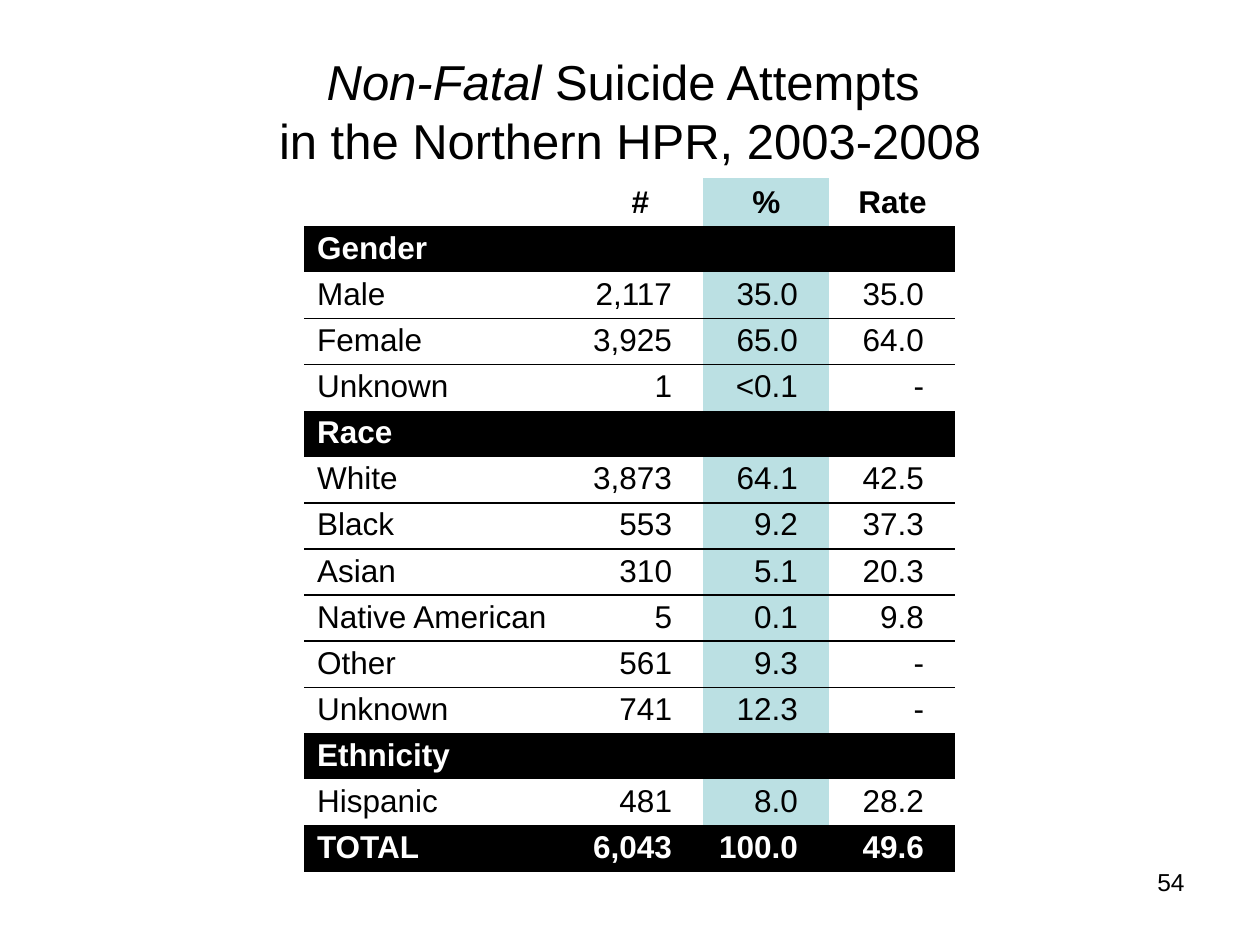
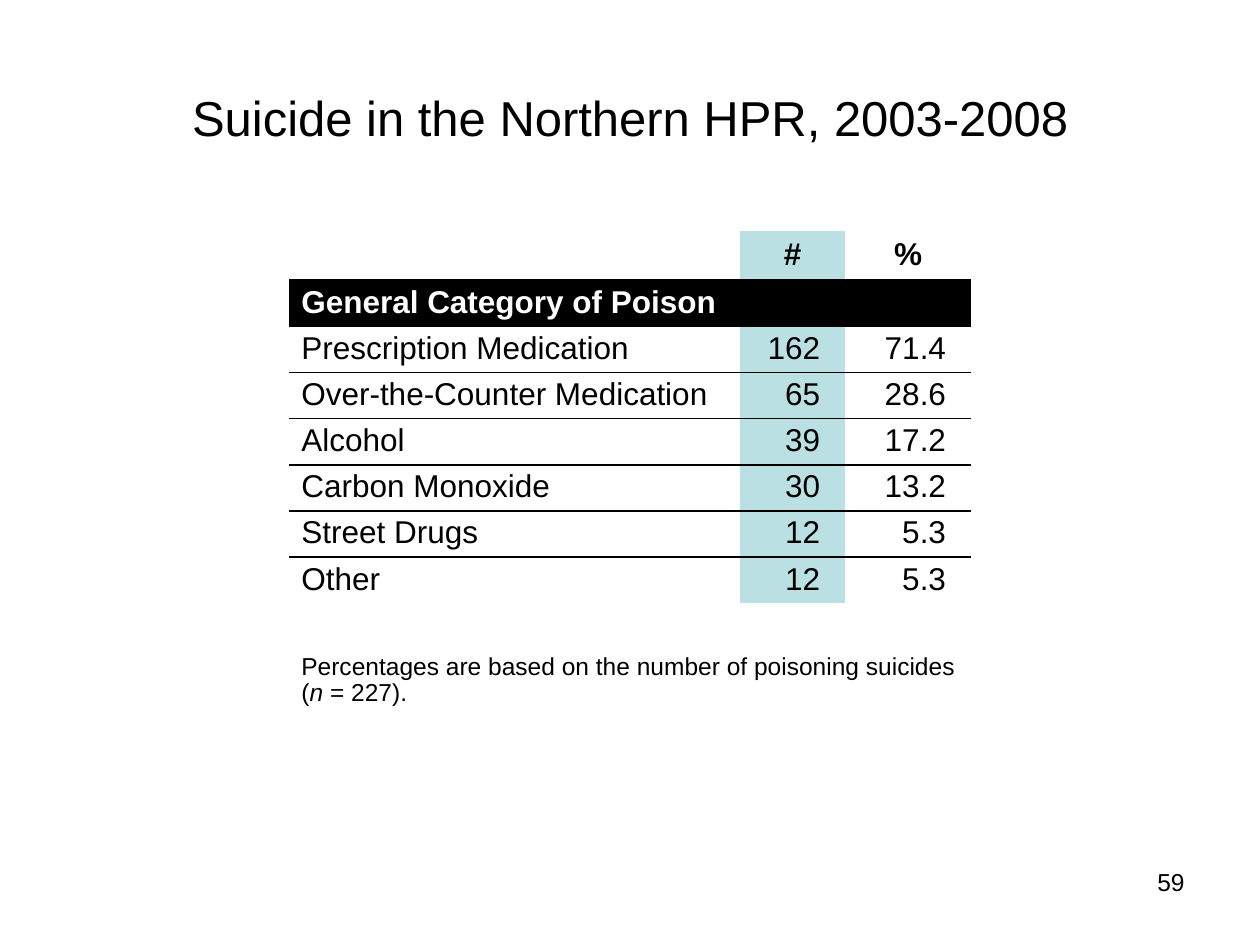
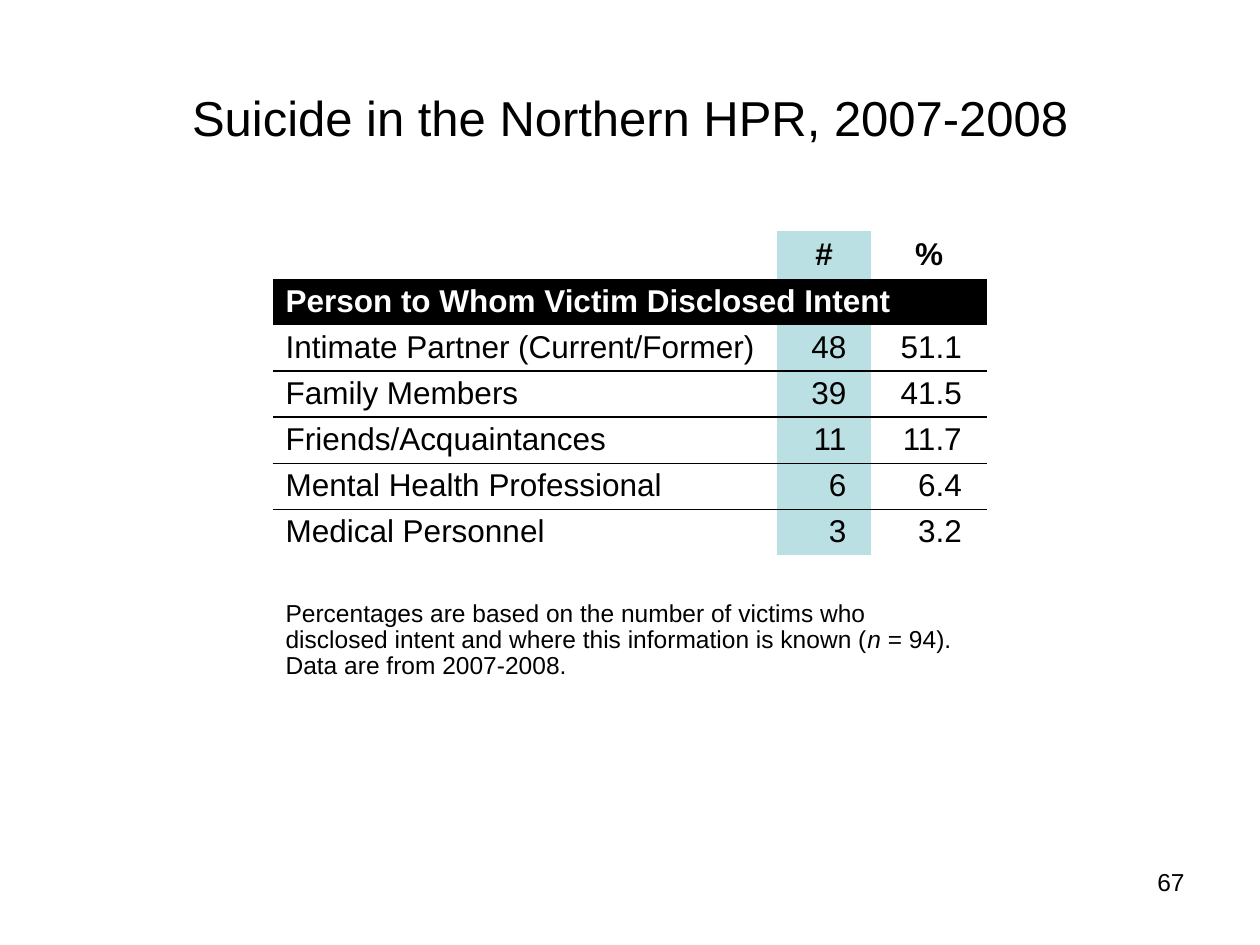
from pptx import Presentation
from pptx.dml.color import RGBColor as RGB
from pptx.enum.text import MSO_ANCHOR as ANCHOR, PP_ALIGN as ALIGN
from pptx.oxml import parse_xml
from pptx.oxml.ns import nsdecls, qn
from pptx.util import Pt

BLACK = RGB(0x00, 0x00, 0x00)
WHITE = RGB(0xFF, 0xFF, 0xFF)
TEAL = RGB(0xBB, 0xE0, 0xE3)
FONT = "Arial"
PLAIN_TABLE = "{2D5ABB26-0587-4C30-8999-92F81FD0307C}"
SLIDE_W, SLIDE_H = 720, 540
HEAD_H, ROW_H, NOTE_LINE_H = 27.4, 26.35, 15
CELL_TOP, CELL_BOTTOM = 1.5, 3.6

SLIDES = [
    dict(
        number="54", title=[("Non-Fatal ", True), ("Suicide Attempts \nin the Northern HPR, 2003-2008", False)],
        title_top=18, table_top=102, widths=[156, 72, 72, 72], highlight=2, inset=18, band=ROW_H,
        rows=[
            ("head", ["", "#", "%", "Rate"]),
            ("section", ["Gender"]),
            ("data", ["Male", "2,117", "35.0", "35.0"]),
            ("data", ["Female", "3,925", "65.0", "64.0"]),
            ("data", ["Unknown", "1", "<0.1", "-"]),
            ("section", ["Race"]),
            ("data", ["White", "3,873", "64.1", "42.5"]),
            ("data", ["Black", "553", "9.2", "37.3"]),
            ("data", ["Asian", "310", "5.1", "20.3"]),
            ("data", ["Native American", "5", "0.1", "9.8"]),
            ("data", ["Other", "561", "9.3", "-"]),
            ("data", ["Unknown", "741", "12.3", "-"]),
            ("section", ["Ethnicity"]),
            ("data", ["Hispanic", "481", "8.0", "28.2"]),
            ("total", ["TOTAL", "6,043", "100.0", "49.6"]),
        ],
    ),
    dict(
        number="59", title=[("Suicide in the Northern HPR, 2003-2008", False)],
        title_top=21.6, table_top=132, widths=[258, 60, 72], highlight=1, inset=14.4, band=27.2,
        rows=[
            ("head", ["", "#", "%"]),
            ("section", ["General Category of Poison"]),
            ("data", ["Prescription Medication", "162", "71.4"]),
            ("data", ["Over-the-Counter Medication", "65", "28.6"]),
            ("data", ["Alcohol", "39", "17.2"]),
            ("data", ["Carbon Monoxide", "30", "13.2"]),
            ("data", ["Street Drugs", "12", "5.3"]),
            ("data", ["Other", "12", "5.3"]),
        ],
        note=[("Percentages are based on the number of poisoning suicides (", False),
              ("n ", True), ("= 227).", False)],
        note_lines=2, gap=26,
    ),
    dict(
        number="67", title=[("Suicide in the Northern HPR, 2007-2008", False)],
        title_top=21.6, table_top=132, widths=[288, 54, 66], highlight=1, inset=14.4, band=ROW_H,
        rows=[
            ("head", ["", "#", "%"]),
            ("section", ["Person to Whom Victim Disclosed Intent"]),
            ("data", ["Intimate Partner (Current/Former)", "48", "51.1"]),
            ("data", ["Family Members", "39", "41.5"]),
            ("data", ["Friends/Acquaintances", "11", "11.7"]),
            ("data", ["Mental Health Professional", "6", "6.4"]),
            ("data", ["Medical Personnel", "3", "3.2"]),
        ],
        note=[("Percentages are based on the number of victims who disclosed intent "
               "and where this information is known (", False),
              ("n ", True), ("= 94). Data are from 2007-2008.", False)],
        note_lines=3, gap=20.7,
    ),
]


def write(tf, text, size=18, color=BLACK, bold=False, align=ALIGN.LEFT, spacing=None):
    runs = [(text, False)] if isinstance(text, str) else text
    p = tf.paragraphs[0]
    p.alignment = align
    if spacing:
        p.line_spacing = spacing
    for content, italic in runs:
        for i, line in enumerate(content.split("\n")):
            if i:
                p.add_line_break()
            r = p.add_run()
            r.text = line
            f = r.font
            f.name, f.size, f.bold, f.italic = FONT, Pt(size), bold, italic
            f.color.rgb = color


def add_text(s, box, text, anchor=ANCHOR.TOP, **style):
    tf = s.shapes.add_textbox(*map(Pt, box)).text_frame
    tf.word_wrap = True
    tf.vertical_anchor = anchor
    write(tf, text, **style)


def underline(cell):
    line = parse_xml(
        f'<a:lnB {nsdecls("a")} w="12700"><a:solidFill><a:srgbClr val="{BLACK}"/>'
        '</a:solidFill></a:lnB>')
    cell._tc.get_or_add_tcPr().insert(0, line)


def fill_cell(cell, text, fill=None, inset=7.2, **style):
    cell.vertical_anchor = ANCHOR.BOTTOM
    cell.margin_right = Pt(inset)
    if fill is None:
        cell.fill.background()
    else:
        cell.fill.solid()
        cell.fill.fore_color.rgb = fill
    cell.margin_top = Pt(CELL_TOP if text else 0)
    cell.margin_bottom = Pt(CELL_BOTTOM if text else 0)
    if text:
        write(cell.text_frame, text, spacing=0.95, **style)


def add_data_table(s, content):
    widths, inset = content["widths"], content["inset"]
    rows = list(content["rows"])
    if "note" in content:
        rows += [("gap", []), ("note", [content["note"]])]
    row_heights = {
        "head": HEAD_H, "section": content["band"], "gap": content.get("gap"),
        "note": CELL_TOP + CELL_BOTTOM + NOTE_LINE_H * content.get("note_lines", 0)}
    heights = [row_heights.get(kind, ROW_H) for kind, _ in rows]
    width = sum(widths)
    box = ((SLIDE_W - width) / 2, content["table_top"], width, sum(heights))
    frame = s.shapes.add_table(len(rows), len(widths), *map(Pt, box))
    table = frame.table
    table.first_row = table.horz_banding = False
    next(frame.element.iter(qn("a:tableStyleId"))).text = PLAIN_TABLE
    for column, w in zip(table.columns, widths):
        column.width = Pt(w)
    kinds = [kind for kind, _ in rows] + [None]
    for i, (kind, values) in enumerate(rows):
        table.rows[i].height = Pt(heights[i])
        if kind in ("section", "note"):
            table.cell(i, 0).merge(table.cell(i, len(widths) - 1))
        dark = kind in ("section", "total")
        for j in range(len(widths)):
            cell = table.cell(i, j)
            numeric = j > 0 and kind in ("data", "total")
            lit = j == content["highlight"] and kind in ("head", "data")
            fill_cell(
                cell, values[j] if j < len(values) else "",
                fill=BLACK if dark else TEAL if lit else None,
                inset=inset if numeric else 7.2,
                size=14 if kind == "note" else 18,
                color=WHITE if dark else BLACK,
                bold=dark or kind == "head",
                align=ALIGN.RIGHT if numeric else ALIGN.CENTER if kind == "head" else ALIGN.LEFT)
            if kind == kinds[i + 1] == "data":
                underline(cell)


def main():
    prs = Presentation()
    prs.slide_width, prs.slide_height = Pt(SLIDE_W), Pt(SLIDE_H)
    for content in SLIDES:
        s = prs.slides.add_slide(prs.slide_layouts[6])
        add_text(s, (516, 492, 168, 37.5), content["number"], size=14, align=ALIGN.RIGHT)
        add_text(s, (36, content["title_top"], 648, 90), content["title"],
                 anchor=ANCHOR.MIDDLE, size=28, align=ALIGN.CENTER)
        add_data_table(s, content)
    prs.save("out.pptx")


if __name__ == "__main__":
    main()
